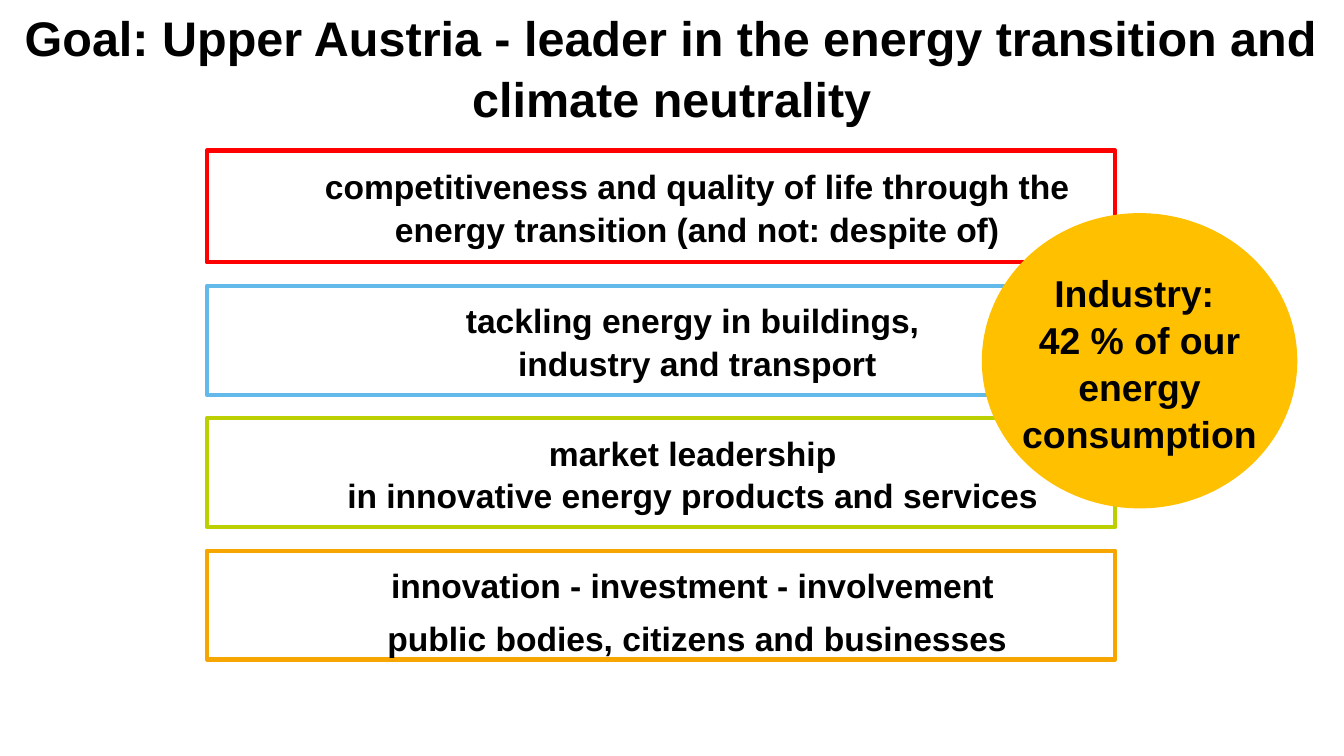
from pptx import Presentation
from pptx.dml.color import RGBColor
from pptx.enum import shapes, text
from pptx.util import Pt


def color(hex_string):
    return RGBColor.from_string(hex_string)


def format_text(frame, size, insets, line_spacing=1.05):
    frame.word_wrap = True
    frame.auto_size = text.MSO_AUTO_SIZE.NONE
    frame.vertical_anchor = text.MSO_ANCHOR.MIDDLE
    left, top, right, bottom = insets
    frame.margin_left, frame.margin_right = Pt(left), Pt(right)
    frame.margin_top, frame.margin_bottom = Pt(top), Pt(bottom)
    for paragraph in frame.paragraphs:
        paragraph.alignment = text.PP_ALIGN.CENTER
        paragraph.line_spacing = line_spacing
        for run in paragraph.runs:
            run.font.name = "Arial"
            run.font.size = Pt(size)
            run.font.bold = True
            run.font.color.rgb = color("000000")


prs = Presentation()
prs.slide_width, prs.slide_height = Pt(720), Pt(405)
slide = prs.slides.add_slide(prs.slide_layouts[5])
plain_insets = (7.2, 3.6, 7.2, 3.6)

# Title
goal = slide.shapes.title
goal.left, goal.top, goal.width, goal.height = Pt(0), Pt(0), Pt(720), Pt(71.3)
goal.text_frame.text = "Goal: Upper Austria - leader in the energy transition and climate neutrality"
format_text(goal.text_frame, 26, plain_insets)

# Framed strategy statements, stacked with equal gaps
statements = [
    ("competitiveness and quality of life through the energy transition (and not: despite of)",
     "FF0000", 60, 1.05),
    ("tackling energy in buildings, \nindustry and transport", "63B9E9", 58.3, 1.05),
    ("market leadership \vin innovative energy products and services ", "BCCF00", 58.3, 1.05),
    ("innovation - investment - involvement \vpublic bodies, citizens and businesses",
     "F7A600", 58.3, Pt(28.4)),
]
gap = 12.6
top = 80.6
for wording, frame_color, height, spacing in statements:
    statement = slide.shapes.add_shape(
        shapes.MSO_SHAPE.RECTANGLE, Pt(110.8), Pt(top), Pt(486.7), Pt(height))
    statement.shadow.inherit = False
    statement.fill.background()
    statement.line.color.rgb = color(frame_color)
    statement.line.width = Pt(2.25)
    statement.text_frame.text = wording
    format_text(statement.text_frame, 18, (47.5, 5.8, 8.6, 5.8), spacing)
    if top == 80.6:
        statement.text_frame.paragraphs[0].space_before = Pt(6)
    top += height + gap

# Industry share: circle with its caption
share = slide.shapes.add_shape(
    shapes.MSO_SHAPE.OVAL, Pt(527), Pt(115.2), Pt(167), Pt(156.2))
share.shadow.inherit = False
share.fill.solid()
share.fill.fore_color.rgb = color("FFC000")
share.line.color.rgb = color("FFC000")
share.line.width = Pt(2)

caption = slide.shapes.add_textbox(Pt(527), Pt(133.9), Pt(167), Pt(120.2))
caption.text_frame.text = "Industry: \v42 % of our energy consumption"
format_text(caption.text_frame, 20, plain_insets)

prs.save("out.pptx")
